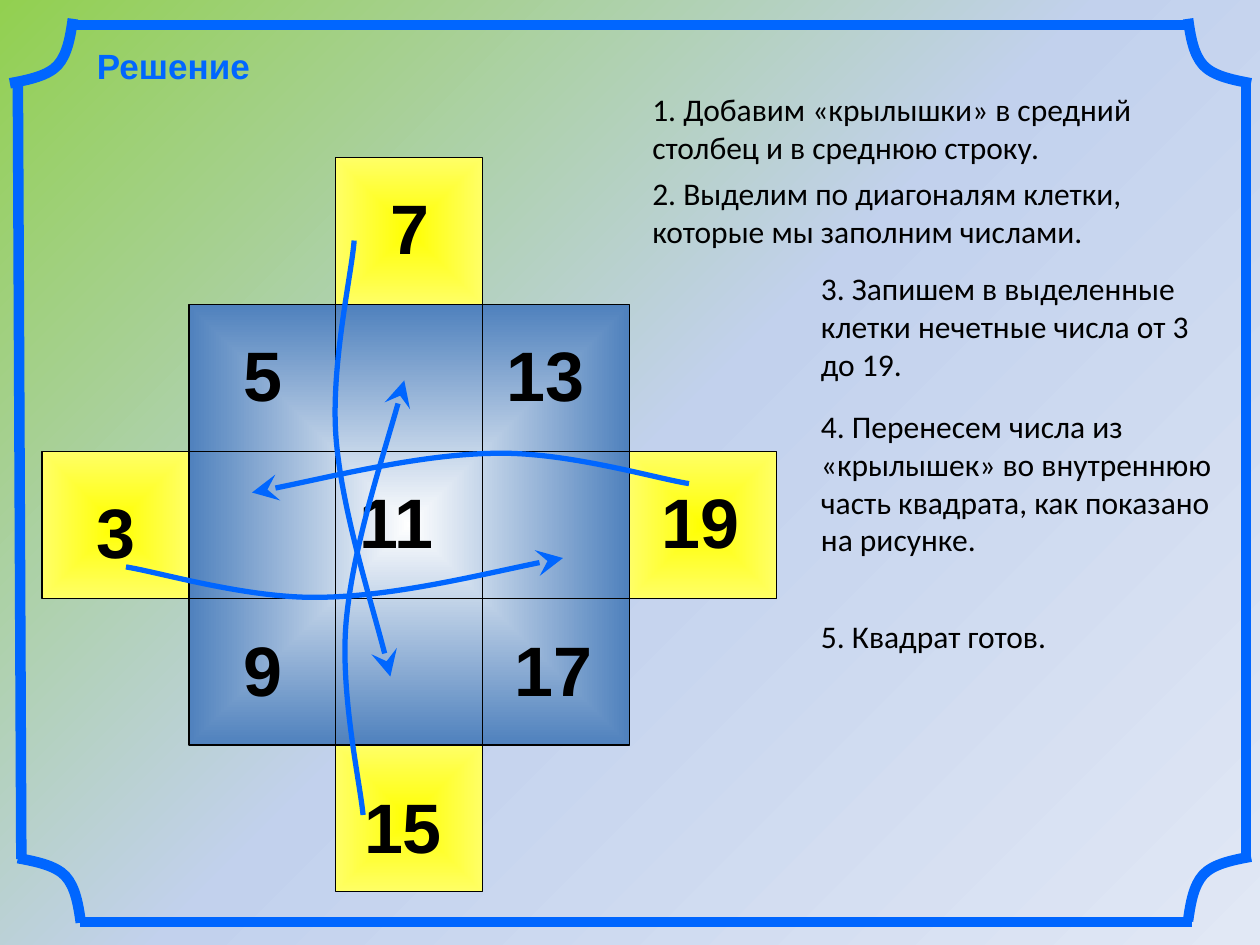
from typing import NamedTuple

from lxml.etree import SubElement
from pptx import Presentation
from pptx.dml.color import RGBColor
from pptx.enum.shapes import MSO_CONNECTOR, MSO_SHAPE
from pptx.enum.text import MSO_ANCHOR, PP_ALIGN
from pptx.oxml.ns import qn
from pptx.util import Cm, Pt

COLORS = {
    "frame": "0066FF", "ink": "000000", "white": "FFFFFF", "blue": "4F81BD",
    "yellow": "FFFF00", "pale_yellow": "FFFF66",
    "green": "92D050", "sky": "C2D1ED", "mist": "E1E8F5",
}
CELL = 2.96
GRID_LEFT, GRID_TOP = 0.85, 3.18


class Label(NamedTuple):
    text: str
    left: float
    top: float


class Step(NamedTuple):
    text: str
    left: float
    top: float
    width: float
    height: float


class Corner(NamedTuple):
    x: float
    y: float
    x_sign: int
    y_sign: int


NUMBERS = [
    Label("3", 1.7, 9.73), Label("5", 4.65, 6.55), Label("7", 7.62, 3.6),
    Label("9", 4.65, 12.5), Label("11", 6.99, 9.53), Label("13", 9.96, 6.55),
    Label("15", 7.09, 15.67), Label("17", 10.13, 12.5), Label("19", 13.08, 9.53),
]
STEPS = [
    Step("1. Добавим «крылышки» в средний столбец и в среднюю строку.", 12.9, 1.7, 11.66, 1.78),
    Step("2. Выделим по диагоналям клетки, которые мы заполним числами.", 12.9, 3.39, 11.66, 1.78),
    Step("3. Запишем в выделенные клетки нечетные числа от 3 до 19.", 16.3, 5.3, 8.47, 2.54),
    Step("4. Перенесем числа из «крылышек» во внутреннюю часть квадрата, "
         "как показано на рисунке.", 16.3, 8.08, 8.47, 4.06),
    Step("5. Квадрат готов.", 16.3, 12.32, 8.47, 1.02),
]
# Bezier points: a start, then triples of two controls and an end
MOVES = [
    [(2.54, 11.43), (3.2, 11.53), (5.05, 12.09), (6.53, 12.04),
     (8, 12.01), (10.34, 11.43), (11.35, 11.25)],
    [(7.14, 4.85), (7.09, 5.54), (6.65, 7.42), (6.78, 8.89),
     (6.91, 10.34), (7.65, 12.65), (7.87, 13.64)],
    [(13.89, 9.75), (13.23, 9.65), (11.38, 9.09), (9.91, 9.14),
     (8.43, 9.17), (6.1, 9.75), (5.08, 9.93)],
    [(7.32, 16.43), (7.26, 15.77), (6.83, 13.87), (6.99, 12.42),
     (7.14, 10.95), (7.9, 8.66), (8.15, 7.67)],
]
CORNER_CURVE = [(0, 0), (0.38, 0.07), (0.76, 0.15), (0.96, 0.36),
                (1.16, 0.58), (1.22, 0.94), (1.27, 1.3)]
CORNERS = [Corner(0.2, 1.68, 1, -1), Corner(25.22, 1.68, -1, -1),
           Corner(0.36, 17.3, 1, 1), Corner(25.22, 17.27, -1, 1)]
FRAME_EDGES = [(1.5, 0.5, 24, 0.5), (1.62, 18.59, 24.03, 18.59),
               (25.12, 1.68, 25.12, 17.32), (0.36, 1.68, 0.43, 17.32)]


def rgb(name: str) -> RGBColor:
    return RGBColor.from_string(COLORS[name])


def set_gradient(owner, fill, stops: list, angle: int | None = None) -> None:
    """Fill with stops; without an angle they run from the centre outwards."""
    fill.gradient()
    gradient = owner.element.find(".//" + qn("a:gradFill"))
    for child in list(gradient):
        gradient.remove(child)
    stop_list = SubElement(gradient, qn("a:gsLst"))
    for position, name in stops:
        stop = SubElement(stop_list, qn("a:gs"), pos=str(position * 1000))
        SubElement(stop, qn("a:srgbClr"), val=COLORS[name])
    if angle is None:
        route = SubElement(gradient, qn("a:path"), {"path": "shape"})
        SubElement(route, qn("a:fillToRect"), dict.fromkeys("ltrb", "50000"))
    else:
        SubElement(gradient, qn("a:lin"), ang=str(angle * 60000), scaled="0")


def add_square(slide, column: int, row: int, span: int = 1,
               stops: list | None = None, outlined: bool = True) -> None:
    shape = slide.shapes.add_shape(
        MSO_SHAPE.RECTANGLE, Cm(GRID_LEFT + column * CELL), Cm(GRID_TOP + row * CELL),
        Cm(span * CELL), Cm(span * CELL))
    shape.shadow.inherit = False
    if stops:
        set_gradient(shape, shape.fill, stops)
    else:
        shape.fill.background()
    if outlined:
        shape.line.color.rgb = rgb("ink")
        shape.line.width = Pt(0.75)
    else:
        shape.line.fill.background()


def add_curve(slide, points: list, width: float, arrow: bool = False) -> None:
    start, *rest = [(Cm(x), Cm(y)) for x, y in points]
    builder = slide.shapes.build_freeform(*start)
    builder.add_line_segments(rest, close=False)
    shape = builder.convert_to_shape()
    shape.shadow.inherit = False
    shape.fill.background()
    shape.line.color.rgb = rgb("frame")
    shape.line.width = Pt(width)
    # Turn each triple of straight segments into one Bezier segment
    outline = shape.element.find(".//" + qn("a:path"))
    segments = outline.findall(qn("a:lnTo"))
    for first in range(0, len(segments), 3):
        bezier = SubElement(outline, qn("a:cubicBezTo"))
        for segment in segments[first:first + 3]:
            bezier.append(segment[0])
            outline.remove(segment)
    if arrow:
        line = shape.element.spPr.find(qn("a:ln"))
        SubElement(line, qn("a:tailEnd"), type="stealth", w="lg", len="lg")


def add_edge(slide, ends: tuple) -> None:
    edge = slide.shapes.add_connector(MSO_CONNECTOR.STRAIGHT, *[Cm(end) for end in ends])
    edge.line.color.rgb = rgb("frame")
    edge.line.width = Pt(6)
    SubElement(edge.element.spPr, qn("a:effectLst"))


def write(shape, text: str, font: str, size: int, color: str, bold: bool, wrap: bool) -> None:
    frame = shape.text_frame
    frame.word_wrap = wrap
    frame.vertical_anchor = MSO_ANCHOR.TOP
    frame.text = text
    paragraph = frame.paragraphs[0]
    paragraph.alignment = PP_ALIGN.LEFT
    paragraph.font.name = font
    paragraph.font.size = Pt(size)
    paragraph.font.bold = bold
    paragraph.font.color.rgb = rgb(color)


def main() -> None:
    presentation = Presentation()
    presentation.slide_width, presentation.slide_height = Cm(25.4), Cm(19.05)
    slide = presentation.slides.add_slide(presentation.slide_layouts[5])
    set_gradient(slide, slide.background.fill,
                 [(0, "green"), (50, "sky"), (100, "mist")], angle=45)

    # Title
    title = slide.shapes.title
    title.left, title.top, title.width, title.height = Cm(1.7), Cm(0.76), Cm(3.61), Cm(1.1)
    write(title, "Решение", "Arial", 20, "frame", bold=True, wrap=False)

    # Wings, then the square and its cells
    for column, row in [(2, 0), (0, 2), (4, 2), (2, 4)]:
        add_square(slide, column, row, stops=[(0, "yellow"), (100, "pale_yellow")])
    add_square(slide, 1, 1, span=3, stops=[(0, "white"), (100, "blue")], outlined=False)
    for row in range(1, 4):
        for column in range(1, 4):
            add_square(slide, column, row)

    # Numbers
    for number in NUMBERS:
        width = 1.29 if len(number.text) == 1 else 2.08
        box = slide.shapes.add_textbox(Cm(number.left), Cm(number.top), Cm(width), Cm(1.95))
        write(box, number.text, "Arial", 40, "ink", bold=True, wrap=False)

    # Arrows that carry the wing numbers across
    for points in MOVES:
        add_curve(slide, points, 3, arrow=True)

    # Frame
    for ends in FRAME_EDGES:
        add_edge(slide, ends)
    for corner in CORNERS:
        add_curve(slide, [(corner.x + corner.x_sign * x, corner.y + corner.y_sign * y)
                          for x, y in CORNER_CURVE], 6)

    # Steps of the solution
    for step in STEPS:
        box = slide.shapes.add_textbox(Cm(step.left), Cm(step.top), Cm(step.width), Cm(step.height))
        write(box, step.text, "Calibri", 18, "ink", bold=False, wrap=True)

    presentation.save("out.pptx")


if __name__ == "__main__":
    main()
